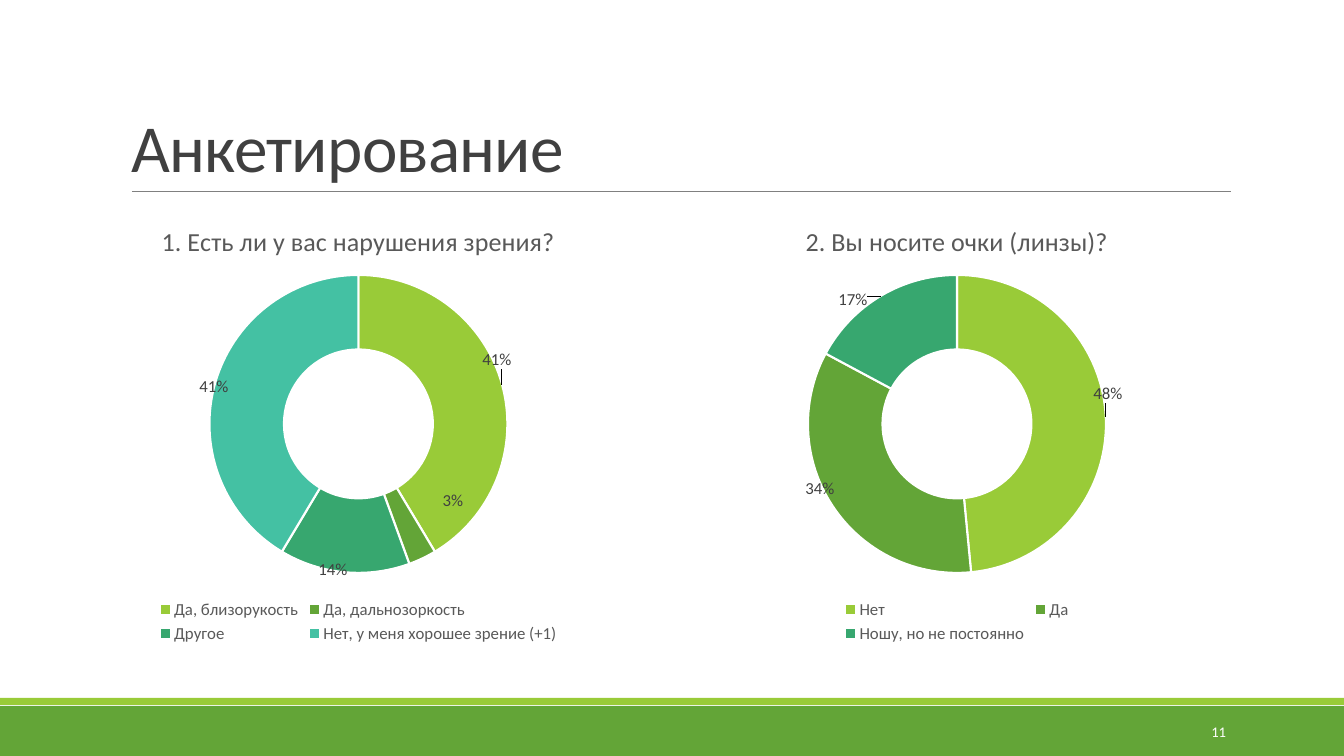
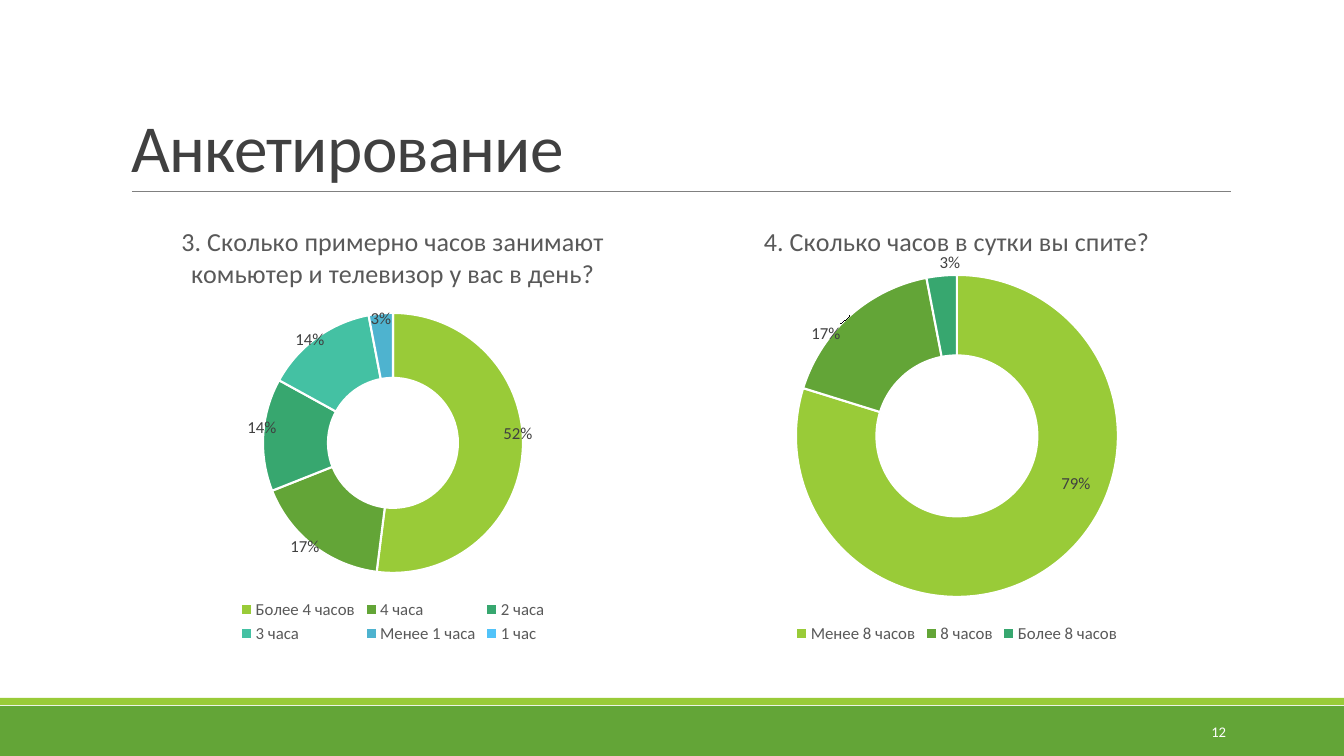
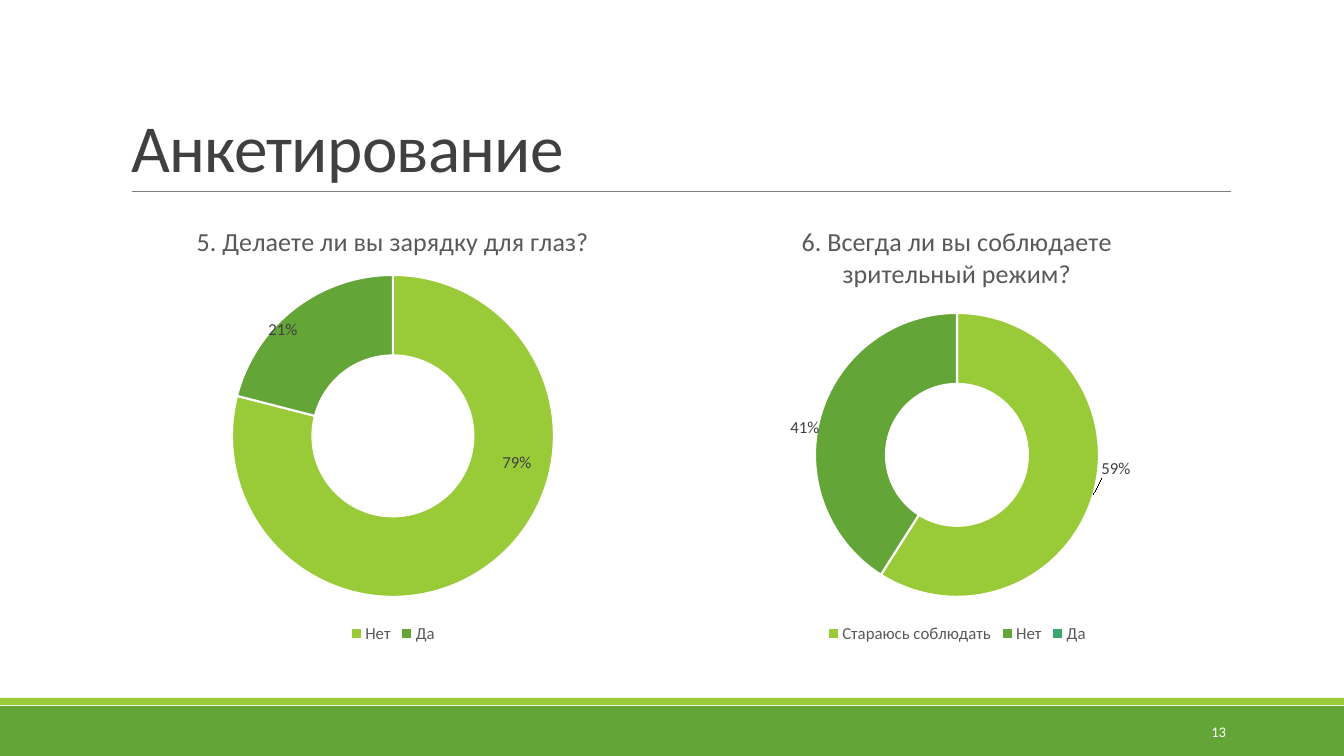
from math import cos, pi, sin

from pptx import Presentation
from pptx.chart.data import CategoryChartData
from pptx.dml.color import RGBColor
from pptx.enum.chart import XL_CHART_TYPE as ChartType, XL_LEGEND_POSITION as LegendPosition
from pptx.enum.shapes import MSO_CONNECTOR as Connector, MSO_SHAPE as Shape
from pptx.enum.text import MSO_ANCHOR as Anchor, MSO_AUTO_SIZE as AutoSize, PP_ALIGN as Align
from pptx.oxml import parse_xml
from pptx.oxml.ns import nsdecls
from pptx.util import Pt

PX = 914400 / 100.8
FONT = "Calibri"
COLORS = {
    "band": "63A537", "stripe": "99CB38", "rule": "808080", "title": "404040",
    "question": "595959", "label": "404040", "paper": "FFFFFF", "base": "000000",
}
SECTORS = ["99CB38", "63A537", "37A76F", "44C1A3", "4EB3CF", "51C3F9"]

TITLE = "Анкетирование"
FIRST_NUMBER = 11
LEFT, RIGHT, WIDE_LEFT = (121, 204, 544, 444), (685, 204, 544, 444), (52, 204, 613, 444)

# Each answer: text, share, centre of its label in px (None: no label).
# Ring: centre height and radius in px.
SLIDES = [
    [
        {"question": "1. Есть ли у вас нарушения зрения?", "frame": WIDE_LEFT, "ring": (424, 149),
         "answers": [("Да, близорукость", 0.41, (497, 360)),
                     ("Да, дальнозоркость", 0.03, (453, 501)),
                     ("Другое", 0.14, (333, 570)),
                     ("Нет, у меня хорошее зрение (+1)", 0.41, (214, 387))]},
        {"question": "2. Вы носите очки (линзы)?", "frame": RIGHT, "ring": (424, 149),
         "answers": [("Нет", 0.48, (1108, 394)),
                     ("Да", 0.34, (820, 489)),
                     ("Ношу, но не постоянно", 0.17, (853, 300))]},
    ],
    [
        {"question": "3. Сколько примерно часов занимают комьютер и телевизор у вас в день?",
         "frame": LEFT, "ring": (443, 130),
         "answers": [("Более 4 часов", 0.52, (518, 434)),
                     ("4 часа", 0.17, (305, 547)),
                     ("2 часа", 0.14, (262, 428)),
                     ("3 часа", 0.14, (310, 340)),
                     ("Менее 1 часа", 0.03, (381, 319)),
                     ("1 час", 0, None)]},
        {"question": "4. Сколько часов в сутки вы спите?", "frame": RIGHT, "ring": (436, 161),
         "answers": [("Менее 8 часов", 0.79, (1076, 484)),
                     ("8 часов", 0.17, (826, 334)),
                     ("Более 8 часов", 0.03, (950, 263))]},
    ],
    [
        {"question": "5. Делаете ли вы зарядку для глаз?", "frame": LEFT, "ring": (436, 161),
         "answers": [("Нет", 0.79, (517, 463)),
                     ("Да", 0.21, (283, 330))]},
        {"question": "6. Всегда ли вы соблюдаете зрительный режим?", "frame": RIGHT,
         "ring": (455, 142),
         "answers": [("Стараюсь соблюдать", 0.59, (1116, 469)),
                     ("Нет", 0.41, (805, 428)),
                     ("Да", 0, None)]},
    ],
]


def px(*lengths):
    return [round(length * PX) for length in lengths]


def color(name):
    return RGBColor.from_string(COLORS[name])


def style(font, size, name):
    font.name, font.size, font.bold = FONT, Pt(size), False
    font.color.rgb = color(name)


def prepare_layout(layout, slide):
    """Put the bands, the rule and the title place on the layout."""
    for place in list(layout.placeholders):
        if place.placeholder_format.idx:
            place.element.getparent().remove(place.element)
        else:
            place.left, place.top, place.width, place.height = px(121, 31, 1109, 160)
    decor = []
    for name, top, height in (("band", 706, 50), ("stripe", 698, 7)):
        band = slide.shapes.add_shape(Shape.RECTANGLE, *px(0, top, 1344, height))
        band.shadow.inherit = False
        band.fill.solid()
        band.fill.fore_color.rgb = color(name)
        band.line.fill.background()
        decor.append(band)
    rule = slide.shapes.add_connector(Connector.STRAIGHT, *px(132, 191, 1231, 191))
    rule.line.color.rgb = color("rule")
    rule.line.width = Pt(0.5)
    rule.element.spPr.append(parse_xml(f"<a:effectLst {nsdecls('a')}/>"))
    for part in decor + [rule]:
        layout.shapes.element.append(part.element)


def add_title(slide):
    title = slide.shapes.title.text_frame
    title.vertical_anchor = Anchor.BOTTOM
    title.auto_size = AutoSize.NONE
    heading = title.paragraphs[0]
    heading.alignment = Align.LEFT
    heading.line_spacing = 0.85
    run = heading.add_run()
    run.text = TITLE
    style(run.font, 48, "title")
    slide.shapes.title.element.xpath(".//a:rPr")[0].set("spc", "-50")


def add_number(slide, number):
    frame = slide.shapes.add_textbox(*px(1092, 712, 144, 40)).text_frame
    frame.word_wrap = True
    frame.vertical_anchor = Anchor.MIDDLE
    frame.paragraphs[0].alignment = Align.RIGHT
    run = frame.paragraphs[0].add_run()
    run.text = str(number)
    style(run.font, 10.5, "paper")


def manual_layout(x, y, before="", after=""):
    return (f"<c:layout {nsdecls('c')}><c:manualLayout>{before}"
            f"<c:x val='{x:.4f}'/><c:y val='{y:.4f}'/>{after}</c:manualLayout></c:layout>")


def place_ring(chart, survey):
    """Fix the ring and move every label from the middle of its sector."""
    left, top, width, height = survey["frame"]
    middle, radius = survey["ring"]
    centre = left + width / 2
    inner = "<c:layoutTarget val='inner'/><c:xMode val='edge'/><c:yMode val='edge'/>"
    size = f"<c:w val='{2 * radius / width:.4f}'/><c:h val='{2 * radius / height:.4f}'/>"
    plot_area = chart.element.xpath(".//c:plotArea")[0]
    for automatic in plot_area.xpath("c:layout"):
        plot_area.remove(automatic)
    plot_area.insert(0, parse_xml(manual_layout(
        (centre - radius - left) / width, (middle - radius - top) / height, inner, size)))
    plot_area.xpath(".//c:holeSize")[0].set("val", "75")

    labels = plot_area.xpath(".//c:ser/c:dLbls")[0]
    flags = "".join(f"<c:show{flag} val='{int(flag == 'Val')}'/>" for flag in (
        "LegendKey", "Val", "CatName", "SerName", "Percent", "BubbleSize"))
    total = sum(share for _, share, _ in survey["answers"])
    passed = 0
    for index, (_, share, spot) in enumerate(survey["answers"]):
        angle = 2 * pi * (passed + share / 2) / total
        passed += share
        if spot:
            dx = spot[0] - centre - 0.75 * radius * sin(angle)
            dy = spot[1] - middle + 0.75 * radius * cos(angle)
            body = manual_layout(dx / width, dy / height) + flags
        else:
            body = "<c:delete val='1'/>"
        labels.insert(index, parse_xml(
            f"<c:dLbl {nsdecls('c')}><c:idx val='{index}'/>{body}</c:dLbl>"))


def add_survey(slide, survey):
    data = CategoryChartData(number_format="0%")
    data.categories = [answer for answer, _, _ in survey["answers"]]
    data.add_series(survey["question"], [share for _, share, _ in survey["answers"]])
    chart = slide.shapes.add_chart(ChartType.DOUGHNUT, *px(*survey["frame"]), data).chart
    style(chart.font, 10, "base")

    chart.has_title = True
    run = chart.chart_title.text_frame.paragraphs[0].add_run()
    run.text = survey["question"]
    style(run.font, 18.6, "question")

    chart.has_legend = True
    chart.legend.position = LegendPosition.BOTTOM
    chart.legend.include_in_layout = False
    style(chart.legend.font, 12, "question")

    chart.plots[0].vary_by_categories = True
    series = chart.plots[0].series[0]
    for index in range(len(survey["answers"])):
        sector = series.points[index].format
        sector.fill.solid()
        sector.fill.fore_color.rgb = RGBColor.from_string(SECTORS[index])
        sector.line.color.rgb = color("paper")
        sector.line.width = Pt(1.5)
    labels = series.data_labels
    labels.show_value = True
    labels.number_format, labels.number_format_is_linked = "0%", False
    style(labels.font, 12, "label")
    place_ring(chart, survey)


def main():
    deck = Presentation()
    deck.slide_width, deck.slide_height = px(1344, 756)
    layout = deck.slide_layouts[5]
    for index, surveys in enumerate(SLIDES):
        slide = deck.slides.add_slide(layout)
        if index == 0:
            prepare_layout(layout, slide)
        add_title(slide)
        for survey in surveys:
            add_survey(slide, survey)
        add_number(slide, FIRST_NUMBER + index)
    deck.save("out.pptx")


if __name__ == "__main__":
    main()
